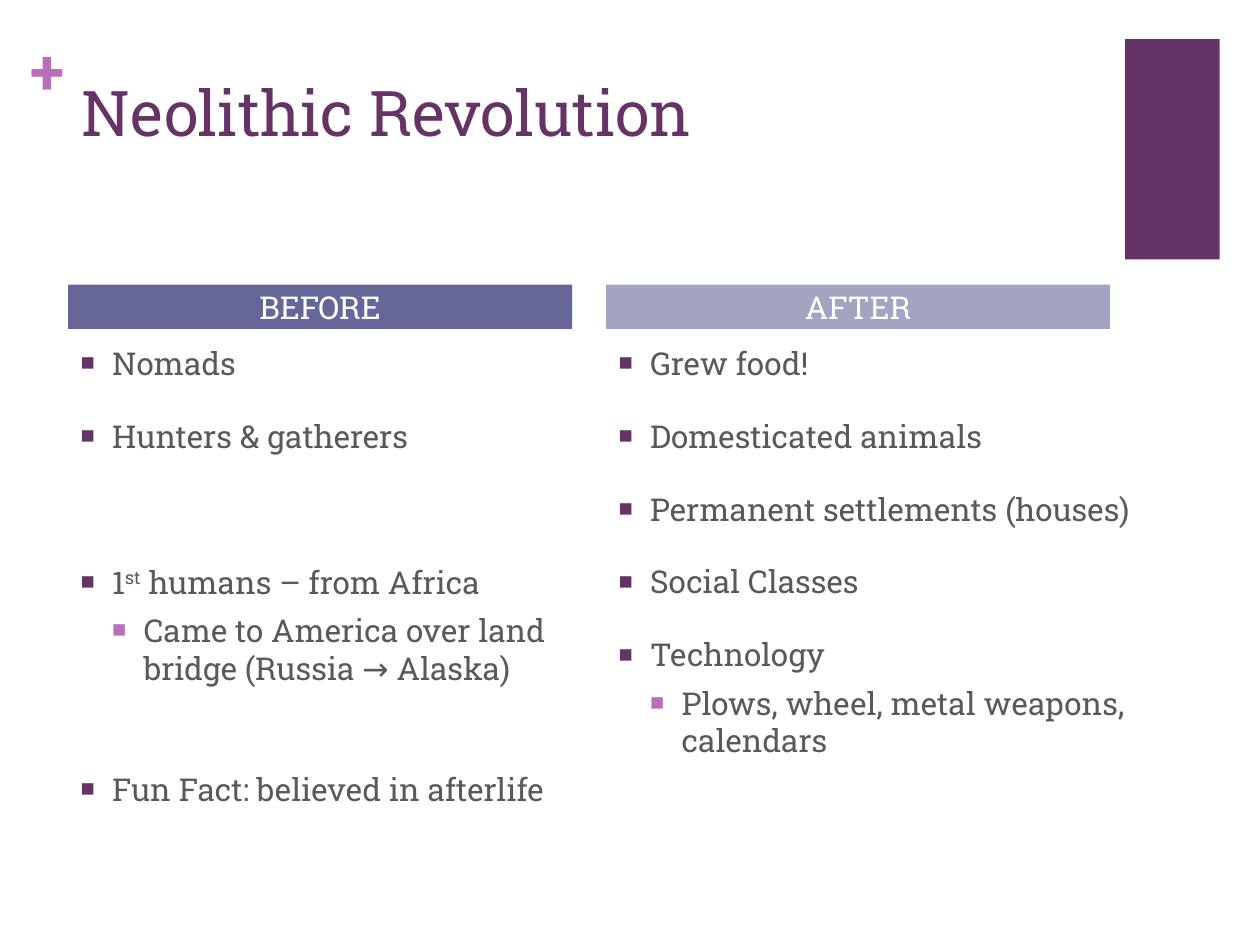
import pptx
import pptx.util
import pptx.dml.color
import pptx.enum.shapes
import pptx.enum.text
import pptx.oxml.ns
import lxml.etree

HUES = {"plum": "663366", "pink": "B870B8", "slate": "666699", "mist": "A3A3C2",
        "gray": "595959", "white": "FFFFFF"}
ALIGN = pptx.enum.text.PP_ALIGN
ANCHOR = pptx.enum.text.MSO_ANCHOR
FIT = pptx.enum.text.MSO_AUTO_SIZE
LEVELS = [{"gap": 20, "left": 0.25, "hue": "plum"},
          {"gap": 6, "left": 0.5, "hue": "pink"}]
COLS, ROWS = 100, 75


class Deck:
    """Holds the style, the grid and the current slide."""

    def __init__(self, font):
        """Open a ten by seven and a half inch deck with a comparison slide."""
        self.font = font
        self.show = pptx.Presentation()
        self.show.slide_width = pptx.util.Inches(10)
        self.show.slide_height = pptx.util.Inches(7.5)
        self.page = self.show.slides.add_slide(self.show.slide_layouts[4])
        self.slots = {s.placeholder_format.idx: s for s in self.page.placeholders}

    def grid(self, col, row, wide, high):
        """Turn columns and rows into left, top, width and height."""
        x, y = self.show.slide_width / COLS, self.show.slide_height / ROWS
        return [round(col * x), round(row * y), round(wide * x), round(high * y)]

    def apply(self, item, form):
        """Set every attribute named in a dict."""
        for name, value in form.items():
            setattr(item, name, value)

    def paint(self, shape, hue):
        """Give a shape a plain fill without an outline."""
        shape.fill.solid()
        shape.fill.fore_color.rgb = pptx.dml.color.RGBColor.from_string(HUES[hue])
        shape.line.fill.background()

    def text(self, para, words, size, hue, bold=False):
        """Add a styled run to a paragraph and return it."""
        run = para.add_run()
        run.text = words
        self.apply(run.font, {"name": self.font, "size": pptx.util.Pt(size), "bold": bold})
        run.font.color.rgb = pptx.dml.color.RGBColor.from_string(HUES[hue])
        return run

    def place(self, idx, box, **form):
        """Move a placeholder onto the grid and return its text frame."""
        slot = self.slots[idx]
        self.apply(slot, dict(zip(("left", "top", "width", "height"), self.grid(*box))))
        self.apply(slot.text_frame, {"auto_size": FIT.NONE, "word_wrap": True, **form})
        return slot.text_frame

    def block(self, box, hue):
        """Draw a plain rectangle."""
        kind = pptx.enum.shapes.MSO_SHAPE.RECTANGLE
        shape = self.page.shapes.add_shape(kind, *self.grid(*box))
        shape.shadow.inherit = False
        self.paint(shape, hue)

    def mark(self, words, box):
        """Add a bold sign in a box without margins."""
        frame = self.page.shapes.add_textbox(*self.grid(*box)).text_frame
        self.apply(frame, {"margin_left": 0, "margin_right": 0, "margin_top": 0,
                           "margin_bottom": 0, "auto_size": FIT.SHAPE_TO_FIT_TEXT})
        self.text(frame.paragraphs[0], words, 36, "pink", True)

    def title(self, words, box):
        """Fill the title placeholder."""
        para = self.place(0, box, vertical_anchor=ANCHOR.TOP).paragraphs[0]
        para.alignment = ALIGN.LEFT
        self.text(para, words, 36, "plum")

    def head(self, idx, words, box, hue):
        """Fill a column heading and its bar."""
        frame = self.place(idx, box, vertical_anchor=ANCHOR.MIDDLE,
                           margin_top=0, margin_bottom=0)
        self.paint(self.slots[idx], hue)
        para = frame.paragraphs[0]
        self.apply(para, {"alignment": ALIGN.CENTER, "space_before": pptx.util.Pt(0)})
        self.text(para, words, 18, "white")

    def bullet(self, para, left, hue):
        """Give a paragraph a hanging square bullet."""
        props = para._p.get_or_add_pPr()
        props.set("marL", str(pptx.util.Inches(left)))
        props.set("indent", str(pptx.util.Inches(-0.25)))
        qn = pptx.oxml.ns.qn
        tint = lxml.etree.SubElement(props, qn("a:buClr"))
        lxml.etree.SubElement(tint, qn("a:srgbClr"), val=HUES[hue])
        lxml.etree.SubElement(props, qn("a:buSzPct"), val="75000")
        lxml.etree.SubElement(props, qn("a:buChar"), char="■")

    def list(self, idx, box, items):
        """Fill a body with (level, extra gap, text parts); odd parts are raised."""
        frame = self.place(idx, box, vertical_anchor=ANCHOR.TOP)
        for spot, (level, extra, parts) in enumerate(items):
            para = frame.add_paragraph() if spot else frame.paragraphs[0]
            look = LEVELS[level]
            self.apply(para, {"level": level,
                              "space_before": pptx.util.Pt(look["gap"] + extra)})
            self.bullet(para, look["left"], look["hue"])
            for turn, part in enumerate(parts):
                run = self.text(para, part, 18, "gray")
                if turn % 2:
                    run.font._element.set("baseline", "30000")


def main():
    """Build the slide and save it."""
    deck = Deck("Roboto Slab")
    deck.block((89.3, 3.1, 7.5, 17.5), "plum")
    deck.mark("+", (2.4, 2.5, 2.9, 6.1))
    deck.title("Neolithic Revolution", (5.5, 5.3, 82.6, 12.2))
    before = [(0, 0, ["Nomads"]),
              (0, 0, ["Hunters & gatherers"]),
              (0, 41.7, ["1", "st", " humans – from Africa"]),
              (1, 0, ["Came to America over land bridge (Russia → Alaska)"]),
              (0, 27.7, ["Fun Fact: believed in afterlife"])]
    after = [(0, 0, ["Grew food!"]),
             (0, 0, ["Domesticated animals"]),
             (0, 0, ["Permanent settlements (houses)"]),
             (0, 0, ["Social Classes"]),
             (0, 0, ["Technology"]),
             (1, 0, ["Plows, wheel, metal weapons, calendars"])]
    sides = [("BEFORE", "slate", 40, before), ("AFTER", "mist", 44.5, after)]
    for turn, (name, hue, wide, items) in enumerate(sides):
        left = 5.4 + 42.7 * turn
        deck.head(1 + 2 * turn, name, (left, 22.6, 40, 3.5), hue)
        deck.list(2 + 2 * turn, (left, 26.8, wide, 40.2), items)
    deck.show.save("out.pptx")


if __name__ == "__main__":
    main()
